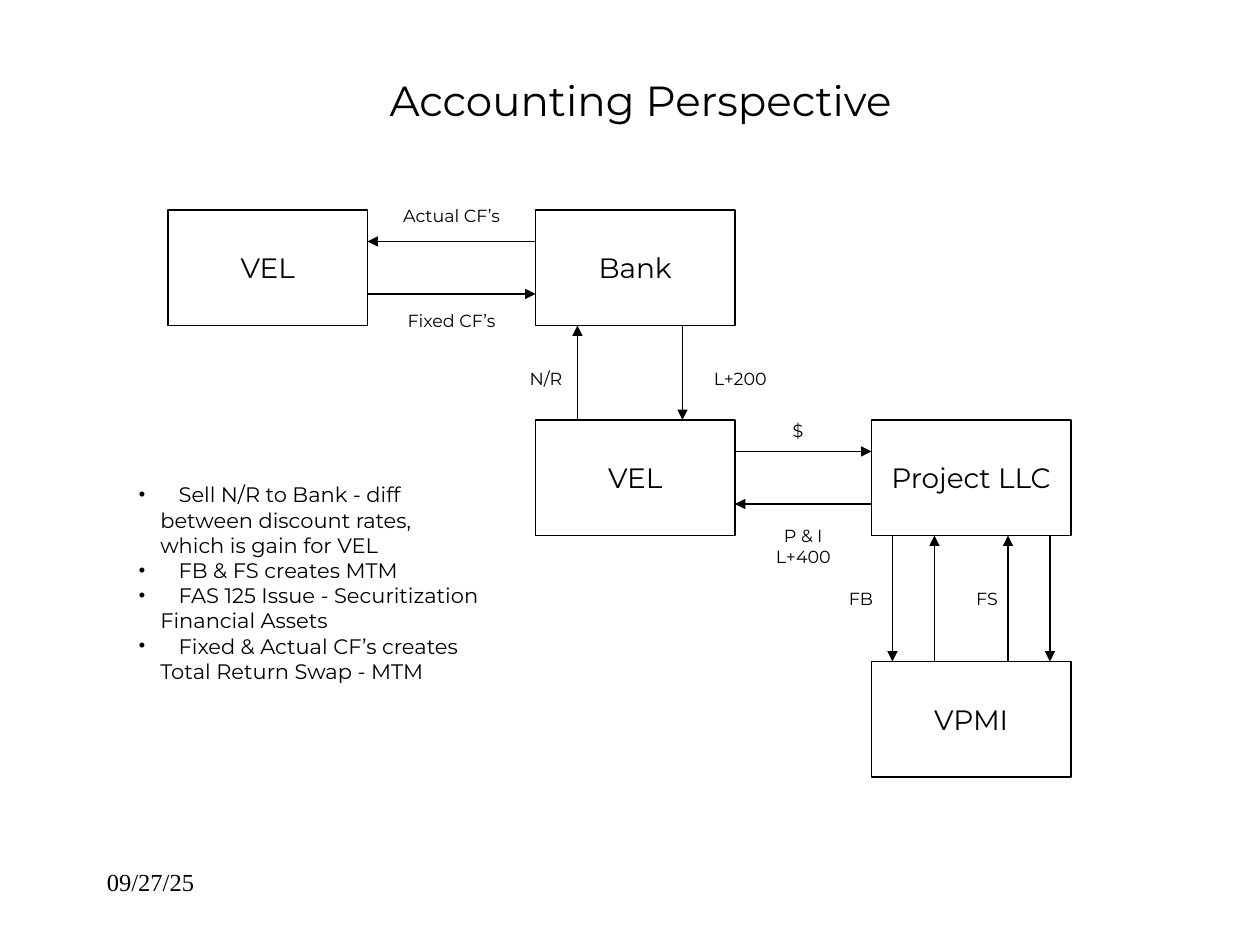
from lxml import etree
from pptx import Presentation
from pptx.dml.color import RGBColor
from pptx.enum.shapes import MSO_CONNECTOR, MSO_SHAPE
from pptx.enum.text import MSO_ANCHOR, PP_ALIGN
from pptx.oxml.ns import qn
from pptx.util import Pt

RECTANGLE = MSO_SHAPE.RECTANGLE
STRAIGHT = MSO_CONNECTOR.STRAIGHT
MIDDLE, TOP = MSO_ANCHOR.MIDDLE, MSO_ANCHOR.TOP
CENTER, LEFT = PP_ALIGN.CENTER, PP_ALIGN.LEFT
COLORS = {"ink": "000000"}
INK = RGBColor.from_string(COLORS["ink"])
SANS, SERIF = "Montserrat", "Times New Roman"
BOX_WIDTH, BOX_HEIGHT = 114, 66


def write(shape, lines, size, font=SANS, align=CENTER, anchor=MIDDLE, wrap=False):
    frame = shape.text_frame
    frame.word_wrap = wrap
    frame.vertical_anchor = anchor
    for index, line in enumerate(lines):
        para = frame.add_paragraph() if index else frame.paragraphs[0]
        para.alignment = align
        span = para.add_run()
        span.text = line
        span.font.size = Pt(size)
        span.font.name = font
        span.font.color.rgb = INK


deck = Presentation()
deck.slide_width, deck.slide_height = Pt(720), Pt(540)
page = deck.slides.add_slide(deck.slide_layouts[6])

title = page.shapes.add_textbox(Pt(60), Pt(36), Pt(612), Pt(42))
write(title, ["Accounting Perspective"], 24, wrap=True)

parties = [
    ("VEL", 306, 240),
    ("Bank", 306, 120),
    ("Project LLC", 498, 240),
    ("VEL", 96, 120),
    ("VPMI", 498, 378),
]
for name, left, top in parties:
    box = page.shapes.add_shape(RECTANGLE, Pt(left), Pt(top), Pt(BOX_WIDTH), Pt(BOX_HEIGHT))
    box.shadow.inherit = False
    box.fill.background()
    box.line.color.rgb = INK
    box.line.width = Pt(0.75)
    write(box, [name], 16)

flows = [
    (306, 138, 210, 138),
    (210, 168, 306, 168),
    (330, 240, 330, 186),
    (390, 186, 390, 240),
    (420, 258, 498, 258),
    (498, 288, 420, 288),
    (510, 306, 510, 378),
    (534, 378, 534, 306),
    (576, 378, 576, 306),
    (600, 306, 600, 378),
]
for flow in flows:
    arrow = page.shapes.add_connector(STRAIGHT, *[Pt(value) for value in flow])
    arrow.line.color.rgb = INK
    arrow.line.width = Pt(0.75)
    properties = arrow.element.spPr
    etree.SubElement(properties.find(qn("a:ln")), qn("a:tailEnd"), type="triangle")
    etree.SubElement(properties, qn("a:effectLst"))

labels = [
    (["Actual CF’s"], 222, 114, 72, 18),
    (["Fixed CF’s"], 222, 174, 72, 18),
    (["N/R"], 300, 204, 24, 24),
    (["L+200"], 402, 204, 42, 24),
    (["$"], 444, 234, 24, 24),
    (["P & I", "L+400"], 438, 300, 42, 24),
    (["FB"], 480, 330, 24, 24),
    (["FS"], 552, 330, 24, 24),
]
for lines, *bounds in labels:
    label = page.shapes.add_textbox(*[Pt(value) for value in bounds])
    label.text_frame.margin_left = label.text_frame.margin_right = 0
    write(label, lines, 10)

notes = [
    ("Sell N/R to Bank - diff", True),
    ("between discount rates,", False),
    ("which is gain for VEL", False),
    ("FB & FS creates MTM", True),
    ("FAS 125 Issue - Securitization", True),
    ("Financial Assets", False),
    ("Fixed & Actual CF’s creates", True),
    ("Total Return Swap - MTM", False),
]
points = page.shapes.add_textbox(Pt(72), Pt(264), Pt(228), Pt(138))
write(points, [line for line, _ in notes], 12, align=LEFT, wrap=True)
for para, (_, bulleted) in zip(points.text_frame.paragraphs, notes):
    margin = Pt(23) if bulleted else Pt(12.5)
    layout = para._p.get_or_add_pPr()
    layout.set("marL", str(margin))
    layout.set("indent", str(-margin if bulleted else 0))
    if bulleted:
        etree.SubElement(layout, qn("a:buFont"), typeface=SERIF)
        etree.SubElement(layout, qn("a:buChar"), char="•")

date = page.shapes.add_textbox(Pt(54), Pt(492), Pt(150), Pt(36))
write(date, ["09/27/25"], 14, SERIF, LEFT, TOP, True)

deck.save("out.pptx")
